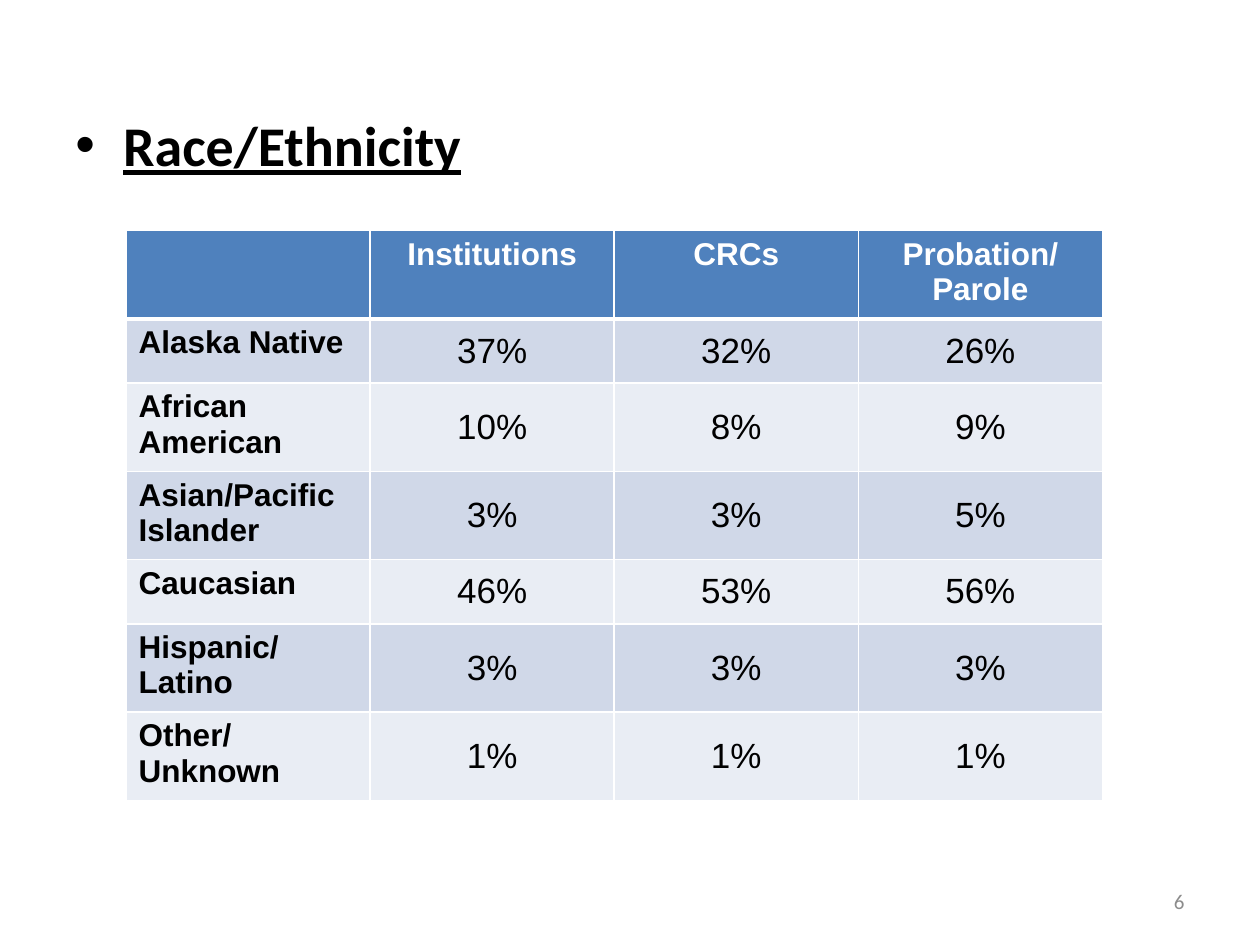
from dataclasses import dataclass

from lxml.etree import SubElement
from pptx import Presentation
from pptx.dml.color import RGBColor as Color
from pptx.enum.text import MSO_ANCHOR as Anchor, PP_ALIGN as Align
from pptx.oxml.ns import qn
from pptx.util import Inches, Pt


@dataclass(frozen=True)
class Theme:
    heading_font: str = "Calibri"
    table_font: str = "Arial"
    black: str = "000000"
    white: str = "FFFFFF"
    gray: str = "8C8C8C"
    header_fill: str = "4F81BD"
    bands: tuple = ("D0D8E8", "E9EDF4")
    heading_size: int = 32
    label_size: int = 18
    value_size: int = 20
    number_size: int = 12


THEME = Theme()
HEADER = ("", "Institutions", "CRCs", "Probation/ Parole")
GROUPS = (
    ("Alaska Native", "37%", "32%", "26%"),
    ("African American", "10%", "8%", "9%"),
    ("Asian/Pacific Islander", "3%", "3%", "5%"),
    ("Caucasian", "46%", "53%", "56%"),
    ("Hispanic/ Latino", "3%", "3%", "3%"),
    ("Other/ Unknown", "1%", "1%", "1%"),
)
ONE_LINE_ROWS = (1, 4)


def style(paragraph, font_name, size, color, bold=False, align=Align.LEFT):
    paragraph.alignment = align
    font = paragraph.font
    font.name = font_name
    font.size = Pt(size)
    font.bold = bold
    font.color.rgb = Color.from_string(color)


def add_text(slide, text, left, top, width, height, anchor=Anchor.TOP):
    frame = slide.shapes.add_textbox(
        Inches(left), Inches(top), Inches(width), Inches(height)
    ).text_frame
    frame.word_wrap = True
    frame.vertical_anchor = anchor
    paragraph = frame.paragraphs[0]
    paragraph.text = text
    return paragraph


def add_bullet(paragraph, indent):
    properties = paragraph._p.get_or_add_pPr()
    properties.set("marL", str(indent))
    properties.set("indent", str(-indent))
    SubElement(properties, qn("a:buFont"), typeface="Arial")
    SubElement(properties, qn("a:buChar"), char="•")


def add_heading(slide):
    paragraph = add_text(slide, "Race/Ethnicity", 0.5, 0.83, 8.17, 5.83)
    style(paragraph, THEME.heading_font, THEME.heading_size, THEME.black, bold=True)
    paragraph.font.underline = True
    paragraph.space_before = Pt(4)
    add_bullet(paragraph, Inches(0.38))


def add_slide_number(slide):
    paragraph = add_text(slide, "6", 7.17, 6.95, 2.33, 0.4, Anchor.MIDDLE)
    style(paragraph, THEME.heading_font, THEME.number_size, THEME.gray, align=Align.RIGHT)


def set_border(cell, side, width):
    line = SubElement(cell._tc.get_or_add_tcPr(), qn(f"a:{side}"), w=str(Pt(width)))
    fill = SubElement(line, qn("a:solidFill"))
    SubElement(fill, qn("a:srgbClr"), val=THEME.white)


def fill_cell(cell, text, row, column):
    is_header, is_label = row == 0, column == 0
    is_value = not is_header and not is_label
    cell.text = text
    cell.vertical_anchor = Anchor.MIDDLE if is_value else Anchor.TOP
    style(
        cell.text_frame.paragraphs[0],
        THEME.table_font,
        THEME.value_size if is_value else THEME.label_size,
        THEME.white if is_header else THEME.black,
        bold=not is_value,
        align=Align.LEFT if is_label else Align.CENTER,
    )
    widths = {"lnL": 1, "lnR": 1, "lnT": 3 if row == 1 else 1, "lnB": 3 if is_header else 1}
    for side, width in widths.items():
        set_border(cell, side, width)
    color = THEME.header_fill if is_header else THEME.bands[(row - 1) % 2]
    cell.fill.solid()
    cell.fill.fore_color.rgb = Color.from_string(color)


def add_group_table(slide):
    rows = (HEADER, *GROUPS)
    table = slide.shapes.add_table(
        len(rows), len(HEADER), Inches(1), Inches(1.83), Inches(7.75), Inches(4.32)
    ).table
    for row, texts in enumerate(rows):
        table.rows[row].height = Inches(0.51 if row in ONE_LINE_ROWS else 0.66)
        for column, text in enumerate(texts):
            fill_cell(table.cell(row, column), text, row, column)


def main():
    presentation = Presentation()
    presentation.slide_width = Inches(10)
    presentation.slide_height = Inches(7.5)
    slide = presentation.slides.add_slide(presentation.slide_layouts[6])
    add_heading(slide)
    add_slide_number(slide)
    add_group_table(slide)
    presentation.save("out.pptx")


if __name__ == "__main__":
    main()
